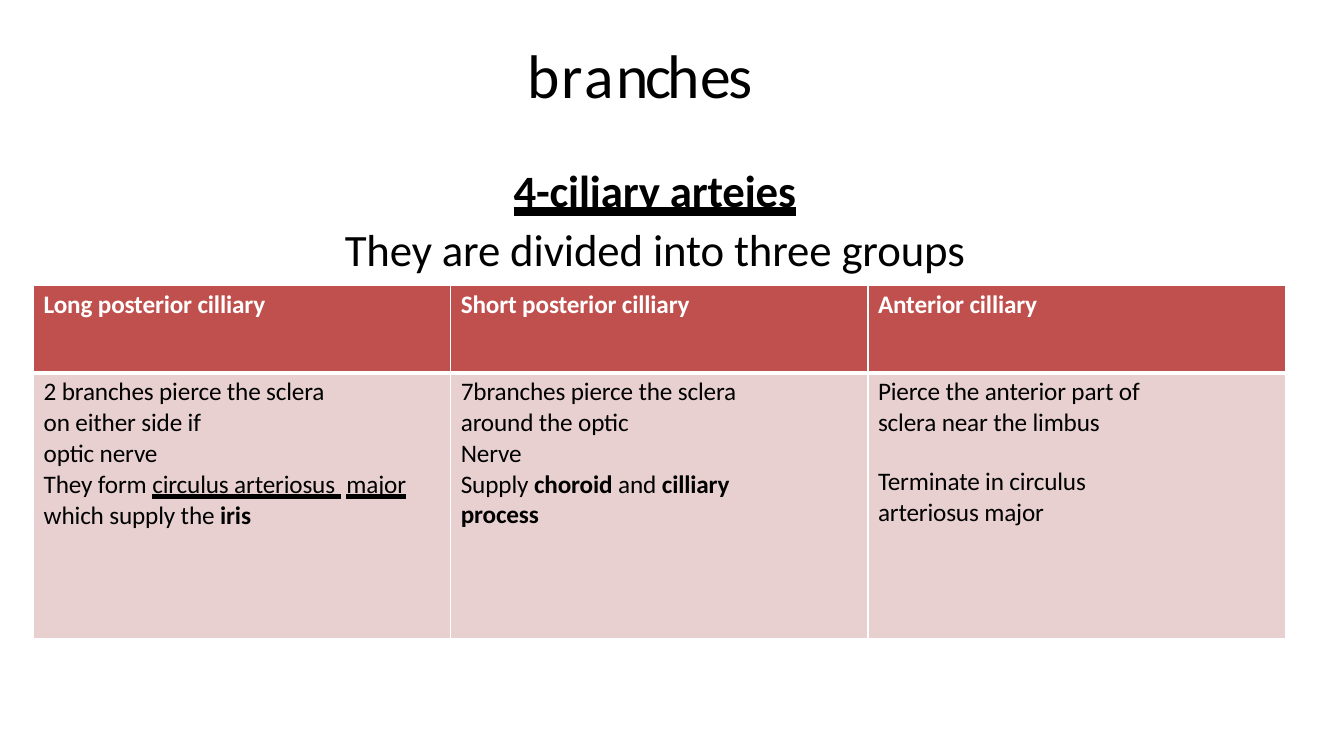
from lxml import etree
from pptx import Presentation
from pptx import util as u
from pptx.dml import color
from pptx.enum import text
from pptx.oxml import ns

FONT = "Calibri"
BLACK, WHITE, RED, PINK = "000000", "FFFFFF", "C0504D", "E8D0D0"
HEADINGS = ["Long posterior cilliary", "Short posterior cilliary", "Anterior cilliary"]

DETAILS = [
    [(2.5, 0, [("2 branches pierce the sclera", "")]),
     (0, 0, [("on either side if", "")]),
     (0, 0, [("optic nerve", "")]),
     (0.6, 24, [("They form ", ""), ("circulus arteriosus ", "u"), (" ", ""), ("major", "u"),
                (" which supply the ", ""), ("iris", "b")])],
    [(2.5, 0, [("7branches pierce the sclera", "")]),
     (0, 0, [("around the optic", "")]),
     (0, 0, [("Nerve", "")]),
     (0.1, 60, [("Supply ", ""), ("choroid ", "b"), ("and ", ""), ("cilliary process", "b")])],
    [(2.5, 0, [("Pierce the anterior part of", "")]),
     (0, 0, [("sclera near the limbus", "")]),
     (20.5, 90, [("Terminate in circulus arteriosus major", "")])],
]


def rgb(value):
    """Return the colour for a hex string."""
    return color.RGBColor.from_string(value)


def add_span(para, wording, size, fill, style="", tracking=0.0):
    """Append one formatted run; style may hold b for bold and u for underline."""
    span = para.add_run()
    span.text = wording
    font = span.font
    font.name, font.size, font.bold = FONT, u.Pt(size), "b" in style
    font.color.rgb = rgb(fill)
    font.underline = text.MSO_UNDERLINE.HEAVY_LINE if "u" in style else False
    font._element.set("spc", str(round(tracking * 100)))


def add_box(page, left, top, width, height, inset):
    """Add a wrapping text box with only a top inset and return its frame."""
    frame = page.shapes.add_textbox(*map(u.Pt, (left, top, width, height))).text_frame
    frame.word_wrap = True
    frame.margin_left = frame.margin_right = frame.margin_bottom = 0
    frame.margin_top = u.Pt(inset)
    return frame


def add_title(page, left, top, width, height):
    """Place the slide title."""
    frame = add_box(page, left, top, width, height, 1)
    frame.vertical_anchor = text.MSO_ANCHOR.MIDDLE
    para = frame.paragraphs[0]
    para.space_before = u.Pt(1.1)
    for wording, tracking in [("br", 1.3), ("a", 1.6), ("nch", -2.5), ("es", -2)]:
        add_span(para, wording, 44, BLACK, tracking=tracking)


def add_intro(page, left, top, width, height):
    """Place the underlined topic and the sentence below it."""
    frame = add_box(page, left, top, width, height, 5)
    lines = [(5.1, "4-ciliary arteies", "bu"), (4.1, "They are divided into three groups", "")]
    for index, (before, wording, style) in enumerate(lines):
        para = frame.add_paragraph() if index else frame.paragraphs[0]
        para.alignment = text.PP_ALIGN.CENTER
        para.space_before = u.Pt(before)
        add_span(para, wording, 32, BLACK, style, -0.1)


def style_cell(cell, fill, edges):
    """Set the insets, white borders and fill of a cell."""
    cell.margin_left = cell.margin_right = cell.margin_bottom = 0
    cell.margin_top = u.Pt(2.5)
    properties = cell._tc.get_or_add_tcPr()
    for side, width in zip("LRTB", edges):
        line = etree.SubElement(properties, ns.qn(f"a:ln{side}"), w=str(u.Pt(width)))
        solid = etree.SubElement(line, ns.qn("a:solidFill"))
        etree.SubElement(solid, ns.qn("a:srgbClr"), val=WHITE)
    cell.fill.solid()
    cell.fill.fore_color.rgb = rgb(fill)


def fill_cell(cell, paragraphs, ink):
    """Write paragraphs given as space before, right margin and styled runs."""
    frame = cell.text_frame
    for index, (before, right, spans) in enumerate(paragraphs):
        para = frame.add_paragraph() if index else frame.paragraphs[0]
        para.space_before = u.Pt(before)
        properties = para._p.get_or_add_pPr()
        properties.set("marL", str(u.Pt(7.2)))
        properties.set("marR", str(u.Pt(right)))
        for wording, style in spans:
            add_span(para, wording, 18, ink, style, -0.1)


def add_groups(page, left, top, width, height):
    """Place the table of the three artery groups."""
    box = map(u.Pt, (left, top, width, height))
    table = page.shapes.add_table(2, len(HEADINGS), *box).table
    table.horz_banding = False
    header = 62.6
    table.rows[0].height, table.rows[1].height = u.Pt(header), u.Pt(height - header)
    for index, (heading, details) in enumerate(zip(HEADINGS, DETAILS)):
        table.columns[index].width = u.Pt(width / len(HEADINGS))
        top_cell, body_cell = table.cell(0, index), table.cell(1, index)
        style_cell(top_cell, RED, (1, 1, 1, 3))
        fill_cell(top_cell, [(2.7, 0, [(heading, "b")])], WHITE)
        style_cell(body_cell, PINK, (1, 1, 3, 1))
        fill_cell(body_cell, details, BLACK)


def main():
    """Build the slide and save the deck."""
    deck = Presentation()
    deck.slide_width, deck.slide_height = u.Pt(960), u.Pt(540)
    page = deck.slides.add_slide(deck.slide_layouts[6])
    add_groups(page, 24, 204, 894, 252)
    add_title(page, 376.5, 25, 191, 55)
    add_intro(page, 243.5, 111, 448.5, 87)
    deck.save("out.pptx")


if __name__ == "__main__":
    main()
